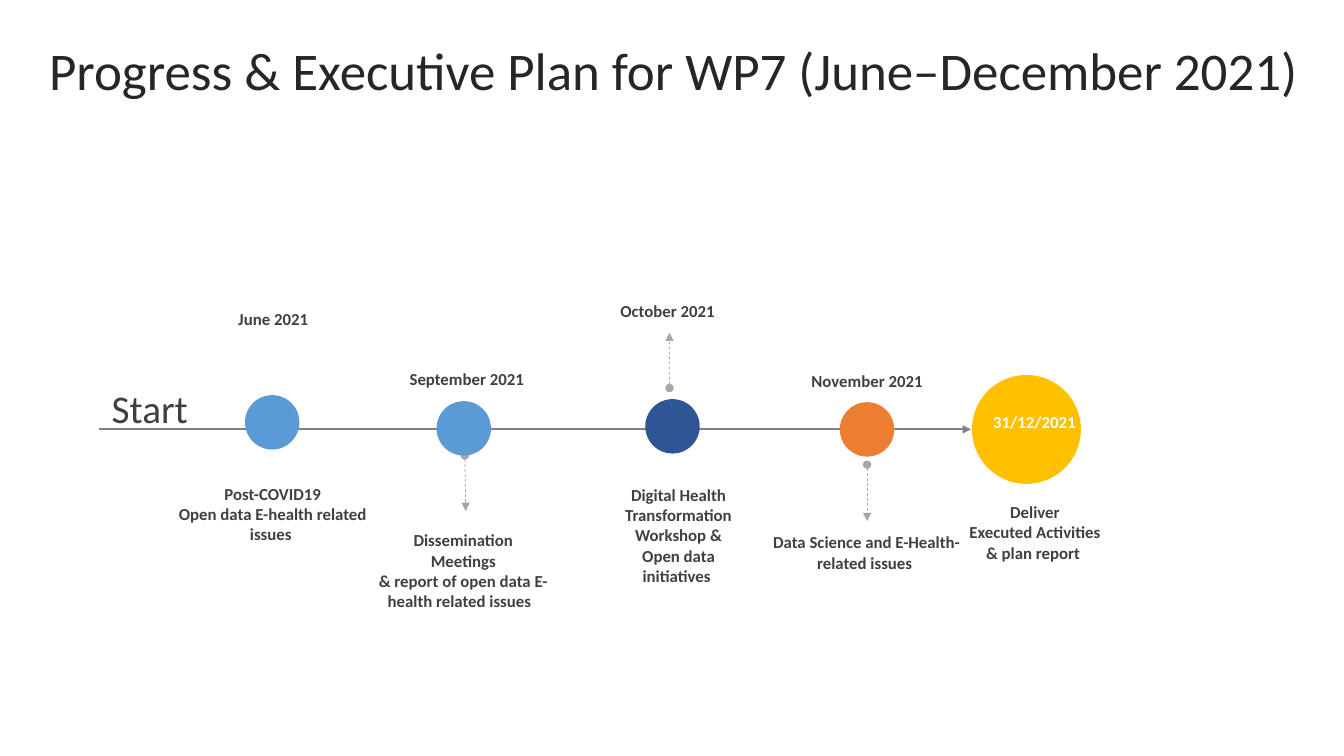
"""Build the WP7 progress timeline slide."""
import pptx
import pptx.util
import pptx.dml.color
import pptx.enum.dml
import pptx.enum.shapes
import pptx.enum.text
import pptx.oxml.ns
from lxml import etree

Inches = pptx.util.Inches
ALIGN = pptx.enum.text.PP_ALIGN
ANCHOR = pptx.enum.text.MSO_ANCHOR

COLORS = {
    "title": "262626", "text": "404040", "white": "FFFFFF",
    "axis": "808080", "pointer": "A6A6A6",
    "blue": "5B9BD5", "navy": "2F5597", "orange": "ED7D31", "gold": "FFC000",
}

POINTERS = [
    (6.64, 3.85, 6.64, 3.3),
    (4.61, 4.52, 4.62, 5.07),
    (8.6, 4.61, 8.6, 5.17),
]

DATES = [
    (2.03, 3.01, 1.36, "June 2021"),
    (3.95, 3.61, 1.36, "September 2021"),
    (5.54, 2.93, 2.2, "October 2021 "),
    (7.92, 3.63, 1.36, "November 2021"),
]

ACTIVITIES = [
    (1.6, 4.75, 2.21, 0.71, ["Post-COVID19", "Open data E-health related issues "]),
    (3.49, 5.21, 2.21, 0.91,
     ["Dissemination", "Meetings", "& report of open data E-health related issues  "]),
    (6.05, 4.76, 1.36, 1.11,
     ["Digital Health Transformation Workshop & Open data initiatives "]),
    (7.49, 5.23, 2.21, 0.5, ["Data Science and E-Health- related issues "]),
    (9.51, 4.93, 1.51, 0.71, ["Deliver", "Executed Activities & plan report "]),
]

MILESTONES = [
    (2.43, 3.92, 0.54, "blue"),
    (4.33, 3.98, 0.54, "blue"),
    (6.4, 3.96, 0.54, "navy"),
    (8.33, 3.99, 0.54, "orange"),
    (9.64, 3.72, 1.08, "gold"),
]


def rgb(name):
    """Return the named colour."""
    return pptx.dml.color.RGBColor.from_string(COLORS[name])


def add_text(s, x, y, w, h, lines, size=12, bold=True, color="text",
             align=ALIGN.CENTER, anchor=ANCHOR.TOP):
    """Add a text box with one paragraph per line and return its text frame."""
    tf = s.shapes.add_textbox(Inches(x), Inches(y), Inches(w), Inches(h)).text_frame
    tf.word_wrap = True
    tf.vertical_anchor = anchor
    for i, line in enumerate(lines):
        p = tf.add_paragraph() if i else tf.paragraphs[0]
        p.alignment = align
        r = p.add_run()
        r.text = line
        r.font.name = "Calibri"
        r.font.size = pptx.util.Pt(size)
        r.font.bold = bold
        r.font.color.rgb = rgb(color)
    return tf


def add_arrow(s, x1, y1, x2, y2, color, width, pointer=False):
    """Add an arrow; a pointer is dashed and starts with a dot."""
    sp = s.shapes.add_connector(
        pptx.enum.shapes.MSO_CONNECTOR.STRAIGHT,
        Inches(x1), Inches(y1), Inches(x2), Inches(y2))
    sp.line.color.rgb = rgb(color)
    sp.line.width = pptx.util.Pt(width)
    qn = pptx.oxml.ns.qn
    ln = sp.line._get_or_add_ln()
    if pointer:
        sp.line.dash_style = pptx.enum.dml.MSO_LINE.DASH
        etree.SubElement(ln, qn("a:headEnd"), type="oval")
    etree.SubElement(ln, qn("a:tailEnd"), type="triangle")
    etree.SubElement(sp._element.spPr, qn("a:effectLst"))


def add_milestone(s, x, y, size, color):
    """Add a filled circle without outline."""
    sp = s.shapes.add_shape(pptx.enum.shapes.MSO_SHAPE.OVAL,
                            Inches(x), Inches(y), Inches(size), Inches(size))
    sp.shadow.inherit = False
    sp.fill.solid()
    sp.fill.fore_color.rgb = rgb(color)
    sp.line.fill.background()


def main():
    """Build and save the slide."""
    prs = pptx.Presentation()
    prs.slide_width, prs.slide_height = Inches(13.33), Inches(7.5)
    s = prs.slides.add_slide(prs.slide_layouts[6])

    tf = add_text(s, 0.35, 0.37, 12.66, 0.79,
                  ["Progress & Executive Plan for WP7 (June–December 2021)"],
                  size=37.8, bold=False, color="title", anchor=ANCHOR.MIDDLE)
    tf.paragraphs[0].line_spacing = 0.7
    tf.paragraphs[0].space_before = pptx.util.Pt(10)

    add_arrow(s, 0.98, 4.26, 9.63, 4.26, "axis", 1.5)
    for pointer in POINTERS:
        add_arrow(s, *pointer, "pointer", 0.5, pointer=True)
    for milestone in MILESTONES:
        add_milestone(s, *milestone)

    add_text(s, 1.01, 3.76, 1.3, 0.57, ["Start"], size=28, bold=False,
             align=ALIGN.LEFT, anchor=ANCHOR.MIDDLE)
    for x, y, w, date in DATES:
        add_text(s, x, y, w, 0.3, [date])
    for activity in ACTIVITIES:
        add_text(s, *activity)
    add_text(s, 9.63, 4.03, 1.26, 0.3, ["31/12/2021"], color="white",
             anchor=ANCHOR.MIDDLE)
    prs.save("out.pptx")


if __name__ == "__main__":
    main()
